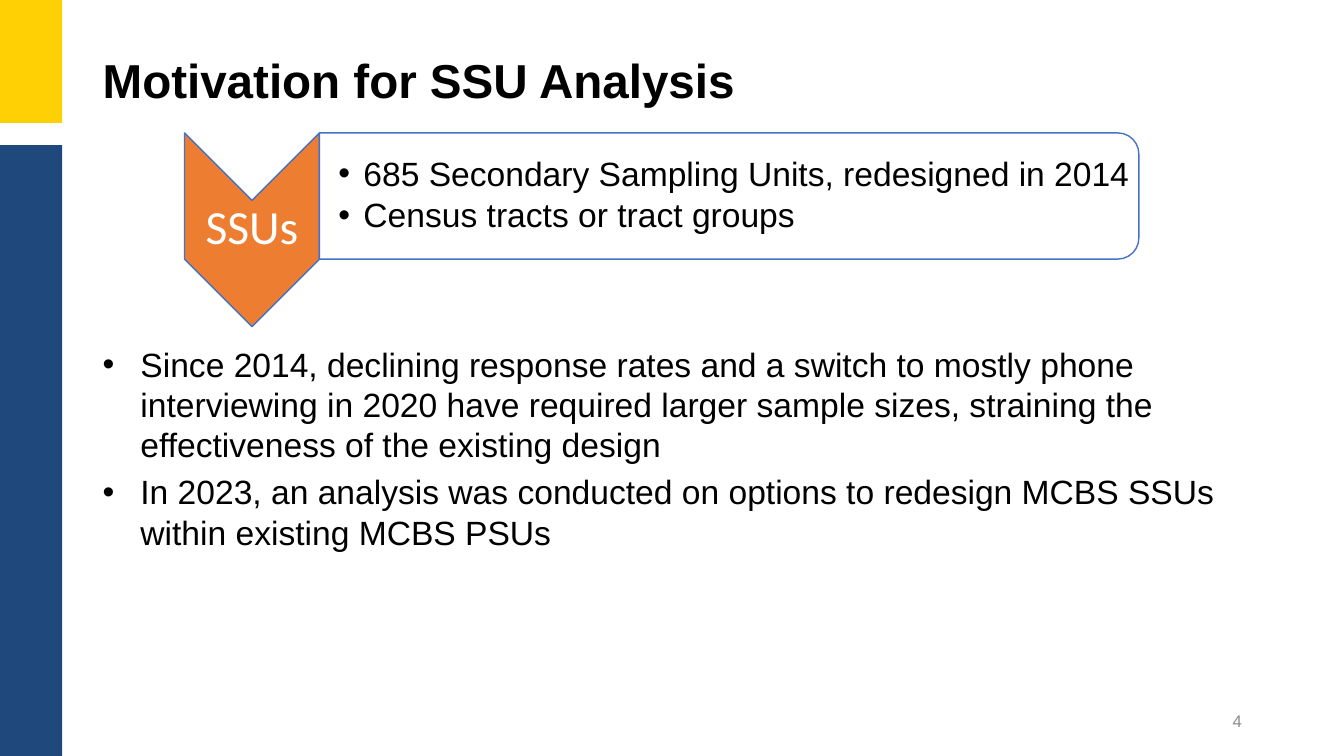
"""Build the slide on the motivation for SSU analysis."""
from typing import NamedTuple

from lxml import etree
from pptx import Presentation
from pptx import util as u
from pptx.dml.color import RGBColor
from pptx.enum import shapes, text
from pptx.oxml import ns

GOLD = RGBColor(0xFF, 0xD0, 0x04)
NAVY = RGBColor(0x1F, 0x49, 0x7D)
ORANGE = RGBColor(0xED, 0x7D, 0x31)
BLUE = RGBColor(0x44, 0x72, 0xC4)
GRAY = RGBColor(0x8C, 0x8C, 0x8C)
BLACK = RGBColor(0, 0, 0)
WHITE = RGBColor(0xFF, 0xFF, 0xFF)

KIND = shapes.MSO_SHAPE
ALIGN = text.PP_ALIGN
MID = text.MSO_ANCHOR.MIDDLE
TOP = text.MSO_ANCHOR.TOP


class Box(NamedTuple):
    """Place and size in centimetres."""
    x: float
    y: float
    w: float
    h: float

    def turn(self) -> "Box":
        """Give the frame that fills this box after a quarter turn."""
        shift = (self.w - self.h) / 2
        return Box(self.x + shift, self.y - shift, self.h, self.w)

    def frame(self) -> list[u.Length]:
        """Give the four lengths."""
        return [u.Cm(n) for n in self]


class Form(NamedTuple):
    """A filled shape, turned and outlined if it has a line."""
    kind: KIND
    box: Box
    fill: RGBColor
    line: RGBColor | None = None
    clear: int | None = None


FORMS = [
    Form(KIND.RECTANGLE, Box(0, 0, 1.57, 3.1), GOLD),
    Form(KIND.RECTANGLE, Box(0, 3.66, 1.57, 15.39), NAVY),
    Form(KIND.CHEVRON, Box(4.65, 3.35, 3.4, 4.88), ORANGE, BLUE),
    Form(KIND.ROUND_2_SAME_RECTANGLE, Box(8.05, 3.35, 20.65, 3.18),
         WHITE, BLUE, 90),
]


def draw(slide, form: Form) -> None:
    """Draw one filled shape."""
    box = form.box.turn() if form.line else form.box
    shape = slide.shapes.add_shape(form.kind, *box.frame())
    shape.shadow.inherit = False
    shape.fill.solid()
    shape.fill.fore_color.rgb = form.fill
    if form.line:
        shape.rotation = 90
        shape.line.color.rgb = form.line
        shape.line.width = u.Pt(1)
    else:
        shape.line.fill.background()
    if form.clear:
        tint = shape.fill._xPr.find(".//" + ns.qn("a:srgbClr"))
        etree.SubElement(tint, ns.qn("a:alpha"), val=str(form.clear * 1000))


def write(slide, box: Box, *lines: str, size: int, font: str = "Arial",
          color: RGBColor = BLACK, bold: bool = False,
          align: ALIGN = ALIGN.LEFT, anchor: MID = MID,
          inset: Box = Box(0.25, 0.13, 0.25, 0.13), space: float = 1,
          before: float = 0, after: float = 0, hang: float = 0) -> None:
    """Write lines in a text box, with bullets if they hang."""
    frame = slide.shapes.add_textbox(*box.frame()).text_frame
    frame.word_wrap = True
    frame.vertical_anchor = anchor
    (frame.margin_left, frame.margin_top,
     frame.margin_right, frame.margin_bottom) = inset.frame()
    frame.text = "\n".join(lines)
    for para in frame.paragraphs:
        para.alignment = align
        para.line_spacing = space
        para.space_before = u.Pt(before)
        para.space_after = u.Pt(after)
        face = para.runs[0].font
        face.name, face.size, face.bold = font, u.Pt(size), bold
        face.color.rgb = color
        if hang:
            props = para._p.get_or_add_pPr()
            props.set("marL", str(u.Cm(hang)))
            props.set("indent", str(-u.Cm(hang)))
            etree.SubElement(props, ns.qn("a:buFont"), typeface="Arial")
            etree.SubElement(props, ns.qn("a:buChar"), char="•")


def main() -> None:
    """Build and save the slide."""
    deck = Presentation()
    deck.slide_width, deck.slide_height = u.Cm(33.87), u.Cm(19.05)
    slide = deck.slides.add_slide(deck.slide_layouts[6])
    for form in FORMS:
        draw(slide, form)
    write(slide, Box(2.34, 0.56, 29.21, 3.07), "Motivation for SSU Analysis",
          size=34, bold=True, space=0.9)
    write(slide, Box(4.65, 5.05, 3.4, 1.47), "SSUs", size=34, font="Calibri",
          color=WHITE, align=ALIGN.CENTER, space=0.9, after=12,
          inset=Box(0.05, 0.05, 0.05, 0.05))
    write(slide, Box(8.05, 3.5, 20.52, 2.87),
          "685 Secondary Sampling Units, redesigned in 2014",
          "Census tracts or tract groups",
          size=24, space=0.9, after=3.6, hang=0.63,
          inset=Box(0.48, 0.05, 0.05, 0.05))
    write(slide, Box(2.34, 8.53, 29.54, 8.33),
          "Since 2014, declining response rates and a switch to mostly phone "
          "interviewing in 2020 have required larger sample sizes, straining "
          "the effectiveness of the existing design",
          "In 2023, an analysis was conducted on options to redesign MCBS "
          "SSUs within existing MCBS PSUs",
          size=24, anchor=TOP, before=4.8, hang=0.95)
    write(slide, Box(23.93, 17.65, 7.62, 1.02), "4", size=12, color=GRAY,
          align=ALIGN.RIGHT)
    deck.save("out.pptx")


if __name__ == "__main__":
    main()
